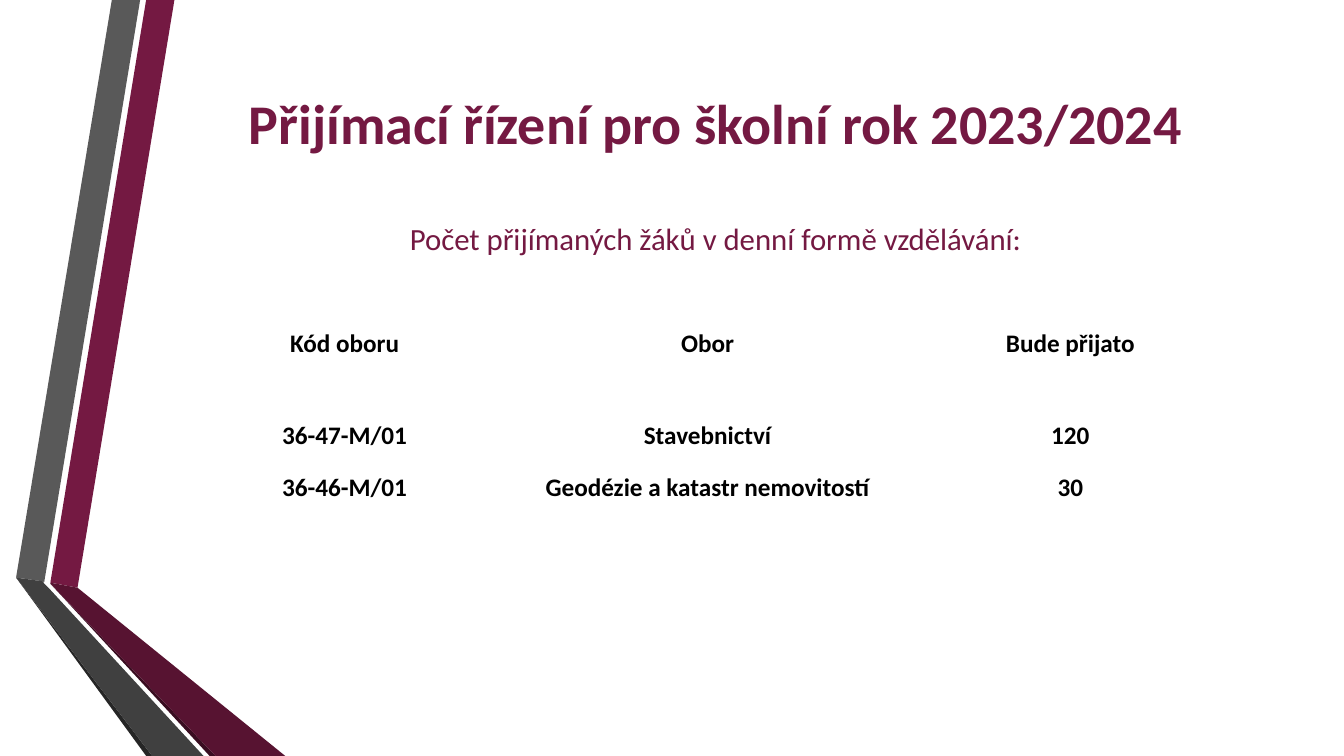
import pptx
import pptx.dml.color
import pptx.enum.text
import pptx.util

Pt = pptx.util.Pt
RGB = pptx.dml.color.RGBColor
CENTER = pptx.enum.text.PP_ALIGN.CENTER
MIDDLE = pptx.enum.text.MSO_ANCHOR.MIDDLE

WINE = RGB(0x74, 0x19, 0x42)
WINE_SHADE = RGB(0x57, 0x13, 0x31)
WINE_EDGE = RGB(0x3A, 0x0D, 0x21)
GREY = RGB(0x59, 0x59, 0x59)
GREY_SHADE = RGB(0x40, 0x40, 0x40)
GREY_EDGE = RGB(0x26, 0x26, 0x26)
BLACK = RGB(0, 0, 0)

FONT = "Calibri"
WIDTH, HEIGHT = 960, 540

# Folded ribbons on the left edge: colour and corner points
RIBBONS = [
    (WINE, [(36, 416.2), (55.4, 419.8), (124.6, 0), (104.4, 0)]),
    (GREY, [(100.1, 0), (79.9, 0), (11.5, 412.6), (31.7, 415.4)]),
    (GREY_EDGE, [(11.5, 412.6), (104.4, HEIGHT), (108.7, HEIGHT)]),
    (WINE_EDGE, [(36, 416.9), (149.8, HEIGHT), (154.1, HEIGHT)]),
    (WINE_SHADE, [(36, 416.9), (154.1, HEIGHT), (203.8, HEIGHT),
                  (55.4, 419.8), (36, 416.2)]),
    (GREY_SHADE, [(145.4, HEIGHT), (34.6, 419.8), (31, 416.2), (31.7, 415.4),
                  (11.5, 412.6), (108.7, HEIGHT)]),
]

HEADING = [
    ("Přijímací řízení pro školní rok 2023/2024",
     {"size": Pt(40), "bold": True}, 0),
    ("Počet přijímaných žáků v denní formě vzdělávání:",
     {"size": Pt(22), "bold": False}, 46),
]

ADMISSIONS = [
    ("Kód oboru", "Obor", "Bude přijato"),
    ("36-47-M/01", "Stavebnictví", "120"),
    ("36-46-M/01", "Geodézie a katastr nemovitostí", "30"),
]
ROW_HEIGHTS = [93.6, 37.6, 37.6]
COLUMN_WIDTH = 259.2


def write_centered(paragraph, text, color, font_format):
    paragraph.alignment = CENTER
    run = paragraph.add_run()
    run.text = text
    run.font.color.rgb = color
    for name, value in {"name": FONT, **font_format}.items():
        setattr(run.font, name, value)


def add_ribbon(slide, color, corners):
    start, *rest = [(Pt(x), Pt(y)) for x, y in corners]
    outline = slide.shapes.build_freeform(*start)
    outline.add_line_segments(rest, close=True)
    ribbon = outline.convert_to_shape()
    ribbon.shadow.inherit = False
    ribbon.fill.solid()
    ribbon.fill.fore_color.rgb = color
    ribbon.line.fill.background()


def add_heading(slide):
    heading = slide.shapes.add_textbox(Pt(116.6), Pt(54), Pt(789.1), Pt(138.2))
    frame = heading.text_frame
    frame.word_wrap = True
    frame.vertical_anchor = MIDDLE
    for index, (text, font_format, gap) in enumerate(HEADING):
        line = frame.add_paragraph() if index else frame.paragraphs[0]
        line.space_before = Pt(gap)
        write_centered(line, text, WINE, font_format)


def add_admissions_table(slide):
    columns = len(ADMISSIONS[0])
    table = slide.shapes.add_table(
        len(ADMISSIONS), columns, Pt(116.6), Pt(198.7),
        Pt(COLUMN_WIDTH * columns), Pt(sum(ROW_HEIGHTS))).table
    table.first_row = False
    table.horz_banding = False
    for column in table.columns:
        column.width = Pt(COLUMN_WIDTH)
    for row, height, texts in zip(table.rows, ROW_HEIGHTS, ADMISSIONS):
        row.height = Pt(height)
        for cell, text in zip(row.cells, texts):
            cell.fill.background()
            cell.vertical_anchor = MIDDLE
            write_centered(cell.text_frame.paragraphs[0], text, BLACK,
                           {"size": Pt(18), "bold": True})


def main():
    deck = pptx.Presentation()
    deck.slide_width, deck.slide_height = Pt(WIDTH), Pt(HEIGHT)
    slide = deck.slides.add_slide(deck.slide_layouts[6])

    # Decoration
    for color, corners in RIBBONS:
        add_ribbon(slide, color, corners)

    # Content
    add_heading(slide)
    add_admissions_table(slide)

    deck.save("out.pptx")


if __name__ == "__main__":
    main()
